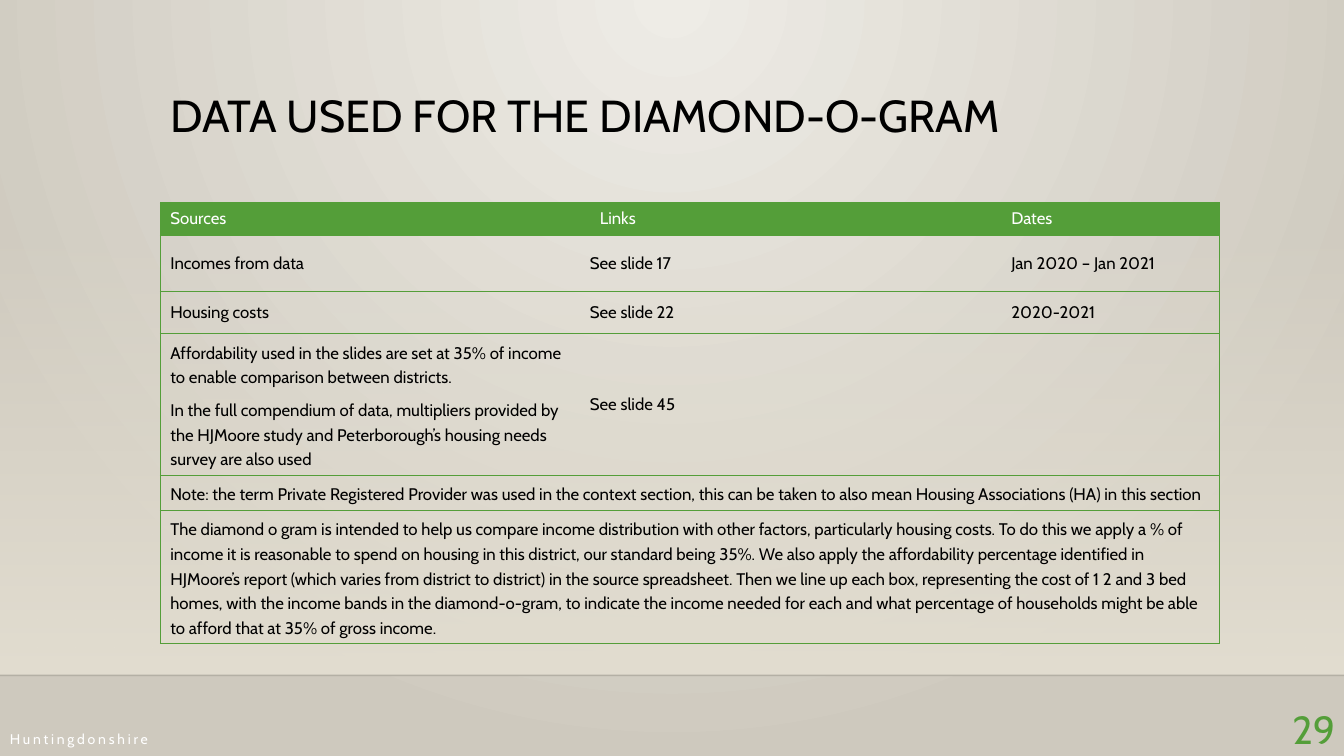
from lxml.etree import SubElement
from pptx import Presentation
from pptx.dml.color import RGBColor
from pptx.enum.shapes import MSO_CONNECTOR, MSO_SHAPE
from pptx.enum.text import MSO_ANCHOR, PP_ALIGN
from pptx.oxml import parse_xml
from pptx.oxml.ns import nsdecls, qn
from pptx.util import Inches, Pt

COLORS = {
    "green": "549E39", "black": "000000", "white": "FFFFFF", "rule": "000001",
    "light": "EEECE6", "stone": "CEC9BE", "sand": "E3DED1",
}


def gradient(start, end, direction, start_alpha=100):
    return parse_xml(
        f'<a:gradFill {nsdecls("a")} rotWithShape="1"><a:gsLst>'
        f'<a:gs pos="0"><a:srgbClr val="{COLORS[start]}"><a:alpha val="{start_alpha * 1000}"/></a:srgbClr></a:gs>'
        f'<a:gs pos="100000"><a:srgbClr val="{COLORS[end]}"/></a:gs>'
        f'</a:gsLst>{direction}</a:gradFill>')


def write(paragraph, text, size, color, **paragraph_format):
    for name, value in paragraph_format.items():
        setattr(paragraph, name, value)
    run = paragraph.add_run()
    run.text = text
    for name, value in {"name": "Cabin", "size": Pt(size), "bold": False}.items():
        setattr(run.font, name, value)
    run.font.color.rgb = RGBColor.from_string(COLORS[color])
    return run


presentation = Presentation()
presentation.slide_width = Inches(13.33)
presentation.slide_height = Inches(7.5)
slide = presentation.slides.add_slide(presentation.slide_layouts[5])

# Background
slide.background.fill.solid()
background = slide.element.find(".//" + qn("p:bgPr"))
background.replace(background[0], gradient(
    "light", "stone",
    '<a:path path="circle"><a:fillToRect l="43000" t="0" r="43000" b="100000"/></a:path>'))

# Sand haze above the floor line
haze = slide.shapes.add_shape(
    MSO_SHAPE.RECTANGLE, 0, Inches(2.21), Inches(13.33), Inches(4.49))
haze.shadow.inherit = False
haze.line.fill.background()
haze.fill.solid()
properties = haze.element.spPr
properties.replace(properties.find(qn("a:solidFill")), gradient(
    "sand", "sand", '<a:lin ang="5400000" scaled="0"/>', start_alpha=0))

# Floor line and title rule: left, right, y, width, colour, opacity
for left, right, y, width, color, opacity in [
    (0, 13.33, 6.7, 1, "rule", 20),
    (1.59, 12.1, 2.02, 2.5, "green", 100),
]:
    rule = slide.shapes.add_connector(
        MSO_CONNECTOR.STRAIGHT, Inches(left), Inches(y), Inches(right), Inches(y))
    rule.line.width = Pt(width)
    rule.line.color.rgb = RGBColor.from_string(COLORS[color])
    SubElement(rule.element.spPr.find(".//" + qn("a:srgbClr")),
               qn("a:alpha"), val=str(opacity * 1000))
    SubElement(rule.element.spPr, qn("a:effectLst"))

# Title
title = slide.shapes.title
title.left, title.top, title.width, title.height = (
    Inches(1.59), Inches(0.88), Inches(10.5), Inches(1.15))
title.text_frame.vertical_anchor = MSO_ANCHOR.TOP
title.text_frame.word_wrap = True
write(title.text_frame.paragraphs[0], "DATA USED FOR THE DIAMOND-O-GRAM", 32, "black",
      alignment=PP_ALIGN.LEFT, line_spacing=0.9)

# Source table
rows = [
    ["Sources", "Links", "Dates"],
    ["Incomes from data", "See slide 17", "Jan 2020 – Jan 2021"],
    ["Housing costs", "See slide 22", "2020-2021"],
    ["Affordability used in the slides are set at 35% of income to enable comparison "
     "between districts.\nIn the full compendium of data, multipliers provided by the "
     "HJMoore study and Peterborough’s housing needs survey are also used",
     "See slide 45", ""],
    ["Note: the term Private Registered Provider was used in the context section, this can "
     "be taken to also mean Housing Associations (HA) in this section"],
    ["The diamond o gram is intended to help us compare income distribution with other "
     "factors, particularly housing costs. To do this we apply a % of income it is "
     "reasonable to spend on housing in this district, our standard being 35%. We also "
     "apply the affordability percentage identified in HJMoore’s report (which varies from "
     "district to district) in the source spreadsheet. Then we line up each box, "
     "representing the cost of 1 2 and 3 bed homes, with the income bands in the "
     "diamond-o-gram, to indicate the income needed for each and what percentage of "
     "households might be able to afford that at 35% of gross income."],
]
column_widths = [4.26, 4.08, 2.17]
row_heights = [0.32, 0.55, 0.42, 1.4, 0.35, 1.32]
table = slide.shapes.add_table(
    len(rows), len(column_widths), Inches(1.59), Inches(2.02),
    Inches(sum(column_widths)), Inches(sum(row_heights))).table
table.first_row = table.horz_banding = False
for column, width in zip(table.columns, column_widths):
    column.width = Inches(width)
for row, height in zip(table.rows, row_heights):
    row.height = Inches(height)

last_column = len(column_widths) - 1
for row_index, texts in enumerate(rows):
    header = row_index == 0
    full_width = len(texts) == 1
    if full_width:
        table.cell(row_index, 0).merge(table.cell(row_index, last_column))
    for column_index in range(len(column_widths)):
        cell = table.cell(row_index, column_index)

        # Green frame and row lines, no inner column lines
        visible = {"lnL": column_index == 0,
                   "lnR": column_index == last_column or cell.is_merge_origin,
                   "lnT": True, "lnB": True}
        cell_properties = cell._tc.get_or_add_tcPr()
        for edge, shown in visible.items():
            border = SubElement(cell_properties, qn(f"a:{edge}"), w=str(Pt(0.75)))
            if shown:
                paint = SubElement(border, qn("a:solidFill"))
                SubElement(paint, qn("a:srgbClr"), val=COLORS["green"])
            else:
                SubElement(border, qn("a:noFill"))
        if header:
            cell.fill.solid()
            cell.fill.fore_color.rgb = RGBColor.from_string(COLORS["green"])
        else:
            cell.fill.background()
            cell.vertical_anchor = MSO_ANCHOR.MIDDLE
        if column_index == 1 and not header and not full_width:
            cell.margin_left = cell.margin_right = cell.margin_top = cell.margin_bottom = 0

        if cell.is_spanned or not texts[column_index]:
            continue
        spacing = {}
        if row_index >= 3 and column_index == 0:
            spacing = {"line_spacing": 1.2, "space_after": Pt(6)}
        for index, line in enumerate(texts[column_index].split("\n")):
            frame = cell.text_frame
            paragraph = frame.add_paragraph() if index else frame.paragraphs[0]
            write(paragraph, line, 12, "white" if header else "black", **spacing)

# Slide number and footer
for text, box, size, color, alignment, anchor, tracking in [
    ("29", (12.45, 6.95, 0.89, 0.55), 28, "green", PP_ALIGN.RIGHT, MSO_ANCHOR.TOP, 0),
    ("Huntingdonshire", (0, 7.16, 5.44, 0.34), 10, "white", PP_ALIGN.LEFT, MSO_ANCHOR.MIDDLE, 2),
]:
    frame = slide.shapes.add_textbox(*map(Inches, box)).text_frame
    frame.word_wrap = True
    frame.vertical_anchor = anchor
    run = write(frame.paragraphs[0], text, size, color, alignment=alignment)
    run.font._element.set("spc", str(tracking * 100))

presentation.save("out.pptx")
